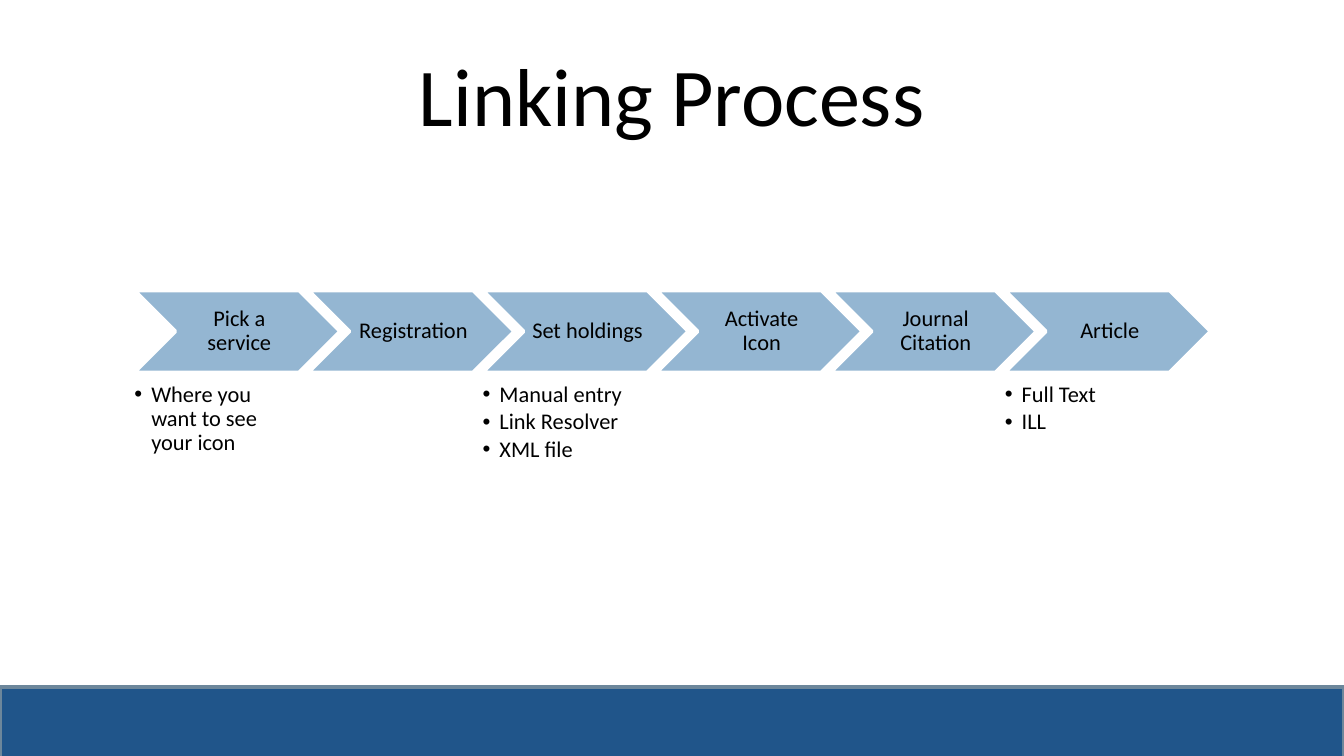
import pptx
import pptx.util
import pptx.dml.color
import pptx.enum.shapes
import pptx.enum.text
import pptx.oxml
import pptx.oxml.ns
from dataclasses import dataclass

Cm = pptx.util.Cm
Pt = pptx.util.Pt
MSO_SHAPE = pptx.enum.shapes.MSO_SHAPE
PP_ALIGN = pptx.enum.text.PP_ALIGN
MSO_ANCHOR = pptx.enum.text.MSO_ANCHOR


@dataclass(frozen=True)
class Theme:
    font: str = "Calibri"
    title_size: int = 44
    body_size: int = 12
    line_width: int = 2
    text: str = "000000"
    background: str = "FFFFFF"
    step: str = "94B6D2"
    footer: str = "20558A"
    footer_line: str = "6D879B"


THEME = Theme()

STEPS = [
    ("Pick a service", ["Where you want to see your icon"]),
    ("Registration", []),
    ("Set holdings", ["Manual entry", "Link Resolver", "XML file"]),
    ("Activate Icon", []),
    ("Journal Citation", []),
    ("Article", ["Full Text", "ILL"]),
]
STEPS_LEFT, STEPS_TOP, STEP_PITCH = 2.54, 5.49, 3.29
STEP_WIDTH, STEP_HEIGHT = 3.89, 1.55
DETAILS_TOP, DETAILS_WIDTH = 7.24, 3.1


def rgb(value):
    return pptx.dml.color.RGBColor.from_string(value)


def add_box(s, kind, left, top, width, height, fill, line):
    sp = s.shapes.add_shape(kind, Cm(left), Cm(top), Cm(width), Cm(height))
    sp.shadow.inherit = False
    sp.fill.solid()
    sp.fill.fore_color.rgb = rgb(fill)
    sp.line.color.rgb = rgb(line)
    sp.line.width = Pt(THEME.line_width)
    return sp


def set_margins(tf, left, other):
    tf.margin_left = Cm(left)
    tf.margin_top = tf.margin_right = tf.margin_bottom = Cm(other)


def format_paragraph(p, size, align):
    p.alignment = align
    for r in p.runs:
        r.font.name = THEME.font
        r.font.size = Pt(size)
        r.font.color.rgb = rgb(THEME.text)


def add_bullet(p, indent):
    """Give the paragraph a hanging bullet."""
    pPr = p._p.get_or_add_pPr()
    pPr.set("marL", str(Cm(indent)))
    pPr.set("indent", str(-Cm(indent)))
    ns = pptx.oxml.ns.nsdecls("a")
    pPr.append(pptx.oxml.parse_xml(f'<a:buFont {ns} typeface="Arial"/>'))
    pPr.append(pptx.oxml.parse_xml(f'<a:buChar {ns} char="•"/>'))


def add_title(s, text):
    sp = s.shapes.add_textbox(Cm(1.27), Cm(0.58), Cm(22.86), Cm(2.39))
    tf = sp.text_frame
    tf.word_wrap = True
    tf.vertical_anchor = MSO_ANCHOR.MIDDLE
    tf.text = text
    format_paragraph(tf.paragraphs[0], THEME.title_size, PP_ALIGN.CENTER)


def add_step(s, left, label):
    sp = add_box(s, MSO_SHAPE.CHEVRON, left, STEPS_TOP, STEP_WIDTH,
                 STEP_HEIGHT, THEME.step, THEME.background)
    tf = sp.text_frame
    tf.word_wrap = True
    tf.vertical_anchor = MSO_ANCHOR.MIDDLE
    set_margins(tf, 0.13, 0.05)
    tf.text = label
    p = tf.paragraphs[0]
    p.line_spacing = 0.9
    format_paragraph(p, THEME.body_size, PP_ALIGN.CENTER)


def add_details(s, left, items):
    sp = s.shapes.add_textbox(Cm(left), Cm(DETAILS_TOP),
                              Cm(DETAILS_WIDTH), Cm(STEP_HEIGHT))
    tf = sp.text_frame
    tf.word_wrap = True
    set_margins(tf, 0, 0)
    tf.text = "\n".join(items)
    for p in tf.paragraphs:
        add_bullet(p, 0.32)
        p.line_spacing = 0.9
        p.space_after = Pt(1.8)
        format_paragraph(p, THEME.body_size, PP_ALIGN.LEFT)


def main():
    prs = pptx.Presentation()
    prs.slide_width, prs.slide_height = Cm(25.4), Cm(14.29)
    s = prs.slides.add_slide(prs.slide_layouts[6])
    s.background.fill.solid()
    s.background.fill.fore_color.rgb = rgb(THEME.background)

    add_box(s, MSO_SHAPE.RECTANGLE, 0, 12.98, 25.4, 1.47,
            THEME.footer, THEME.footer_line)
    add_title(s, "Linking Process")
    for i, (label, items) in enumerate(STEPS):
        left = STEPS_LEFT + i * STEP_PITCH
        add_step(s, left, label)
        if items:
            add_details(s, left, items)

    prs.save("out.pptx")


if __name__ == "__main__":
    main()
